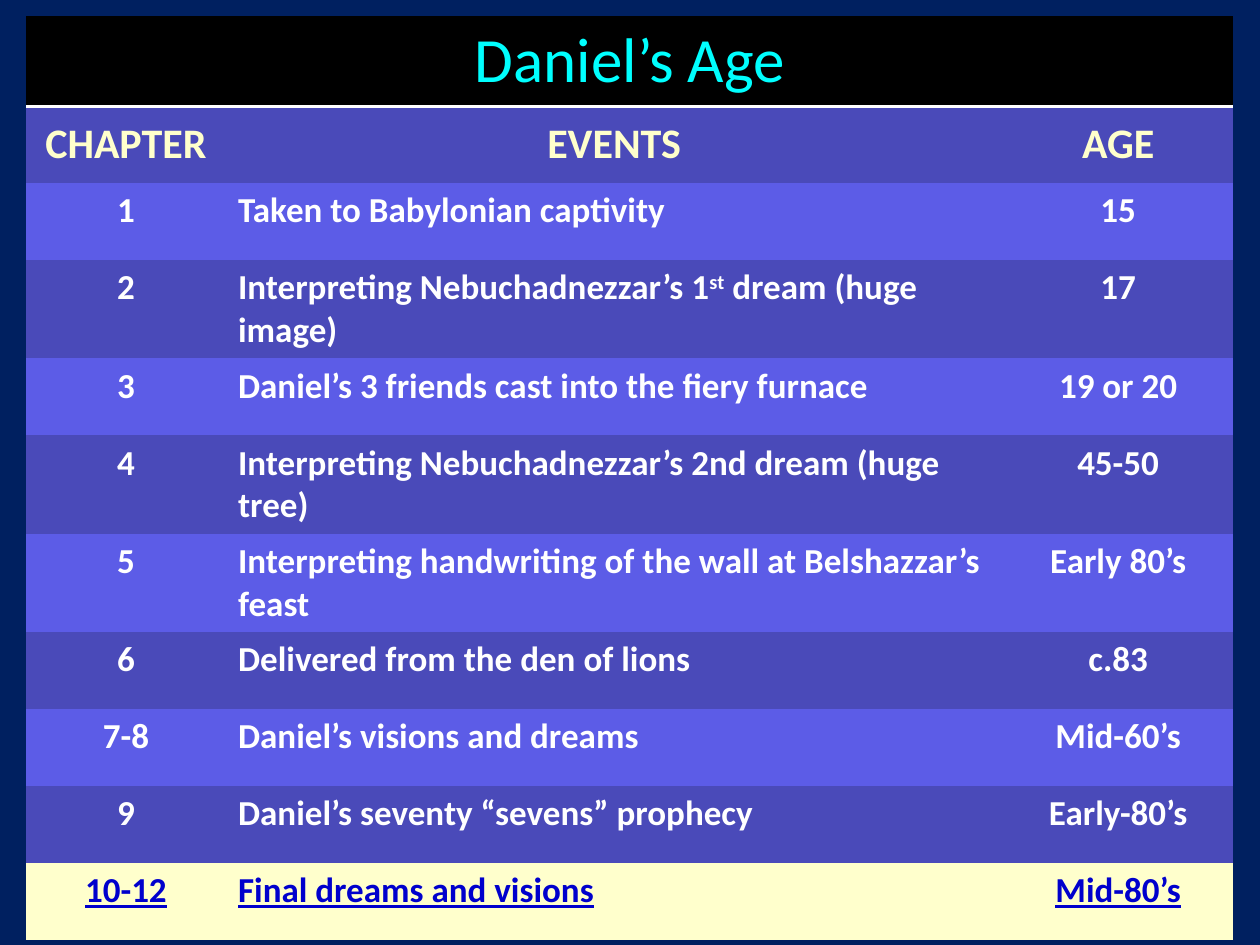
from lxml import etree
from pptx import Presentation
from pptx.dml.color import RGBColor
from pptx.enum.text import MSO_ANCHOR, PP_ALIGN
from pptx.oxml.ns import qn
from pptx.util import Pt

CENTER, LEFT = PP_ALIGN.CENTER, PP_ALIGN.LEFT
MIDDLE, TOP = MSO_ANCHOR.MIDDLE, MSO_ANCHOR.TOP
PLAIN_TABLE_STYLE = "{2D5ABB26-0587-4C30-8999-92F81FD0307C}"
COLORS = {
    "background": "002060",
    "title_band": "000000",
    "title": "00FFFF",
    "dark_band": "4A4AB9",
    "light_band": "5C5CE7",
    "cream": "FFFFCC",
    "white": "FFFFFF",
    "highlight": "0000CC",
}
HEADINGS = ["CHAPTER", "EVENTS", "AGE"]
EVENTS = [
    ("1", "Taken to Babylonian captivity", "15"),
    ("2", "Interpreting Nebuchadnezzar’s 1^st^ dream (huge image)", "17"),
    ("3", "Daniel’s 3 friends cast into the fiery furnace", "19 or 20"),
    ("4", "Interpreting Nebuchadnezzar’s 2nd dream (huge tree)", "45-50"),
    ("5", "Interpreting handwriting of the wall at Belshazzar’s feast", "Early 80’s"),
    ("6", "Delivered from the den of lions", "c.83"),
    ("7-8", "Daniel’s visions and dreams", "Mid-60’s"),
    ("9", "Daniel’s seventy “sevens” prophecy", "Early-80’s"),
    ("10-12", "Final dreams and visions", "Mid-80’s"),
]
COLUMN_WIDTHS = [113.76, 444.24, 131.76]
TITLE_HEIGHT, ROW_HEIGHT, TALL_ROW_HEIGHT = 49, 44, 54
TALL_CHAPTERS = {"2", "4", "5"}


class SlideBuilder:
    def __init__(self, slide, font_name):
        self.slide = slide
        self.font_name = font_name

    def color(self, name):
        return RGBColor.from_string(COLORS[name])

    def background(self, name):
        fill = self.slide.background.fill
        fill.solid()
        fill.fore_color.rgb = self.color(name)

    def table(self, left, top, widths, heights):
        frame = self.slide.shapes.add_table(
            len(heights), len(widths), Pt(left), Pt(top), Pt(sum(widths)), Pt(sum(heights)))
        table = frame.table
        table.first_row = table.horz_banding = False
        table._tbl.tblPr.find(qn("a:tableStyleId")).text = PLAIN_TABLE_STYLE
        for column, width in zip(table.columns, widths):
            column.width = Pt(width)
        for row, height in zip(table.rows, heights):
            row.height = Pt(height)
        return table

    def cell(self, cell, text, fill, color, size, bold=True, underline=None,
             align=CENTER, anchor=TOP):
        cell.fill.solid()
        cell.fill.fore_color.rgb = self.color(fill)
        cell.vertical_anchor = anchor
        paragraph = cell.text_frame.paragraphs[0]
        paragraph.alignment = align
        for index, part in enumerate(text.split("^")):
            run = paragraph.add_run()
            run.text = part
            run.font.name = self.font_name
            run.font.size = Pt(size)
            run.font.bold = bold
            run.font.underline = underline
            run.font.color.rgb = self.color(color)
            if index % 2:
                run._r.get_or_add_rPr().set("baseline", "30000")

    def bottom_border(self, cell, color, width):
        line = etree.Element(qn("a:lnB"), w=str(Pt(width)))
        solid = etree.SubElement(line, qn("a:solidFill"))
        etree.SubElement(solid, qn("a:srgbClr"), val=COLORS[color])
        cell._tc.get_or_add_tcPr().insert(0, line)


def main():
    presentation = Presentation()
    presentation.slide_width, presentation.slide_height = Pt(720), Pt(540)
    slide = presentation.slides.add_slide(presentation.slide_layouts[6])
    builder = SlideBuilder(slide, "Calibri")
    builder.background("background")

    heights = [TITLE_HEIGHT, ROW_HEIGHT]
    heights += [TALL_ROW_HEIGHT if event[0] in TALL_CHAPTERS else ROW_HEIGHT for event in EVENTS]
    table = builder.table(15.12, 9.36, COLUMN_WIDTHS, heights)

    table.cell(0, 0).merge(table.cell(0, 2))
    builder.cell(table.cell(0, 0), "Daniel’s Age", "title_band", "title", 36, bold=None)
    for column, heading in enumerate(HEADINGS):
        builder.bottom_border(table.cell(0, column), "white", 2)
        builder.cell(table.cell(1, column), heading, "dark_band", "cream", 24, anchor=MIDDLE)

    for row, event in enumerate(EVENTS, start=2):
        last = row == len(EVENTS) + 1
        band = "dark_band" if row % 2 else "light_band"
        for column, text in enumerate(event):
            builder.cell(
                table.cell(row, column), text,
                fill="cream" if last else band,
                color="highlight" if last else "white",
                size=20,
                underline=True if last else None,
                align=LEFT if column == 1 else CENTER)

    presentation.save("out.pptx")


if __name__ == "__main__":
    main()
